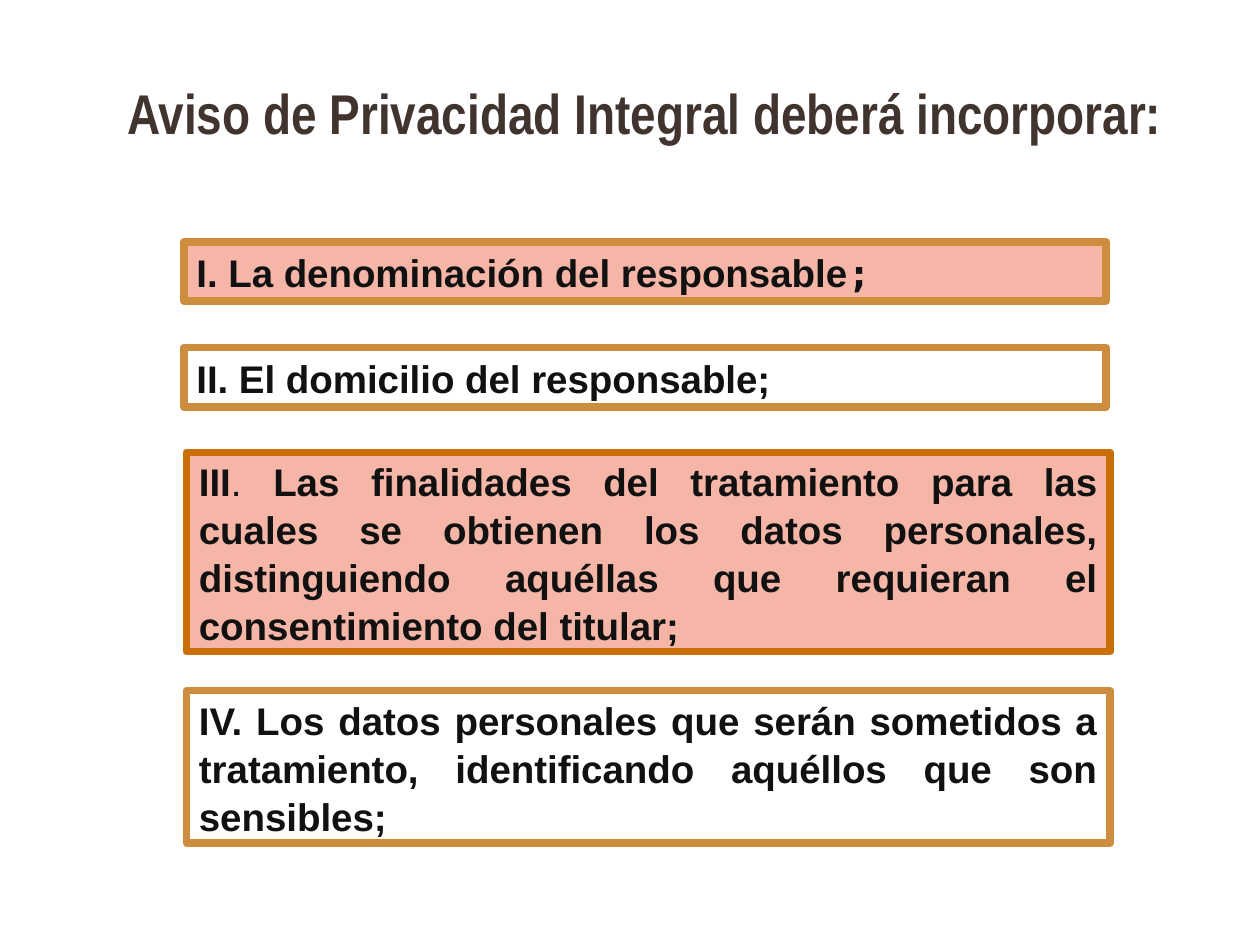
from pptx import Presentation
from pptx.util import Pt
from pptx.dml.color import RGBColor
from pptx.enum.shapes import MSO_SHAPE as Kind
from pptx.enum.text import PP_ALIGN as Align, MSO_ANCHOR as Anchor
from lxml import etree

NS = "http://schemas.openxmlformats.org/drawingml/2006/main"
PINK, GOLD, RUST = "F5B6A7", "CE8D3E", "CA6F06"


def color(code):
    return RGBColor.from_string(code)


def add_run(para, text, size, face, code, bold=True):
    run = para.add_run()
    run.text = text
    font = run.font
    font.size, font.name, font.bold = Pt(size), face, bold
    font.color.rgb = color(code)


deck = Presentation()
deck.slide_width, deck.slide_height = Pt(720), Pt(540)
slide = deck.slides.add_slide(deck.slide_layouts[6])

title = slide.shapes.add_textbox(Pt(58.3), Pt(36.7), Pt(620.6), Pt(54.7)).text_frame
title.word_wrap = True
title.vertical_anchor = Anchor.MIDDLE
para = title.paragraphs[0]
para.alignment = Align.CENTER
add_run(para, "Aviso de Privacidad Integral deberá incorporar:", 32, "Arial Narrow", "41342F")

# left, top, width, height, fill, line, alignment, runs of (text, font, bold)
items = [
    (105.1, 138.2, 527, 33.8, PINK, GOLD, Align.LEFT,
     [("I. La denominación del responsable", "Arial", True),
      (";", "DejaVu Sans Mono", True)]),
    (105.1, 198.7, 527, 33.8, None, GOLD, Align.LEFT,
     [("II. El domicilio del responsable;", "Arial", True)]),
    (106.6, 258.5, 527.8, 113.8, PINK, RUST, Align.JUSTIFY,
     [("III", "Arial", True),
      (". ", "Arial", False),
      ("Las finalidades del tratamiento para las cuales se obtienen los datos "
       "personales, distinguiendo aquéllas que requieran el consentimiento del "
       "titular;", "Arial", True)]),
    (106.6, 394.6, 527.8, 87.1, None, GOLD, Align.JUSTIFY,
     [("IV. Los datos personales que serán sometidos a tratamiento, "
       "identificando aquéllos que son sensibles;", "Arial", True)]),
]

for left, top, width, height, fill, line, align, runs in items:
    box = slide.shapes.add_shape(Kind.RECTANGLE, Pt(left), Pt(top), Pt(width), Pt(height))
    box.shadow.inherit = False
    if fill:
        box.fill.solid()
        box.fill.fore_color.rgb = color(fill)
    else:
        box.fill.background()
    box.line.color.rgb = color(line)
    box.line.width = Pt(4.33)
    etree.SubElement(box.line._get_or_add_ln(), f"{{{NS}}}round")

    frame = box.text_frame
    frame.word_wrap = True
    frame.vertical_anchor = Anchor.MIDDLE
    para = frame.paragraphs[0]
    para.alignment = align
    para.line_spacing = 1.04
    for text, face, bold in runs:
        add_run(para, text, 22, face, "111111", bold)

deck.save("out.pptx")
